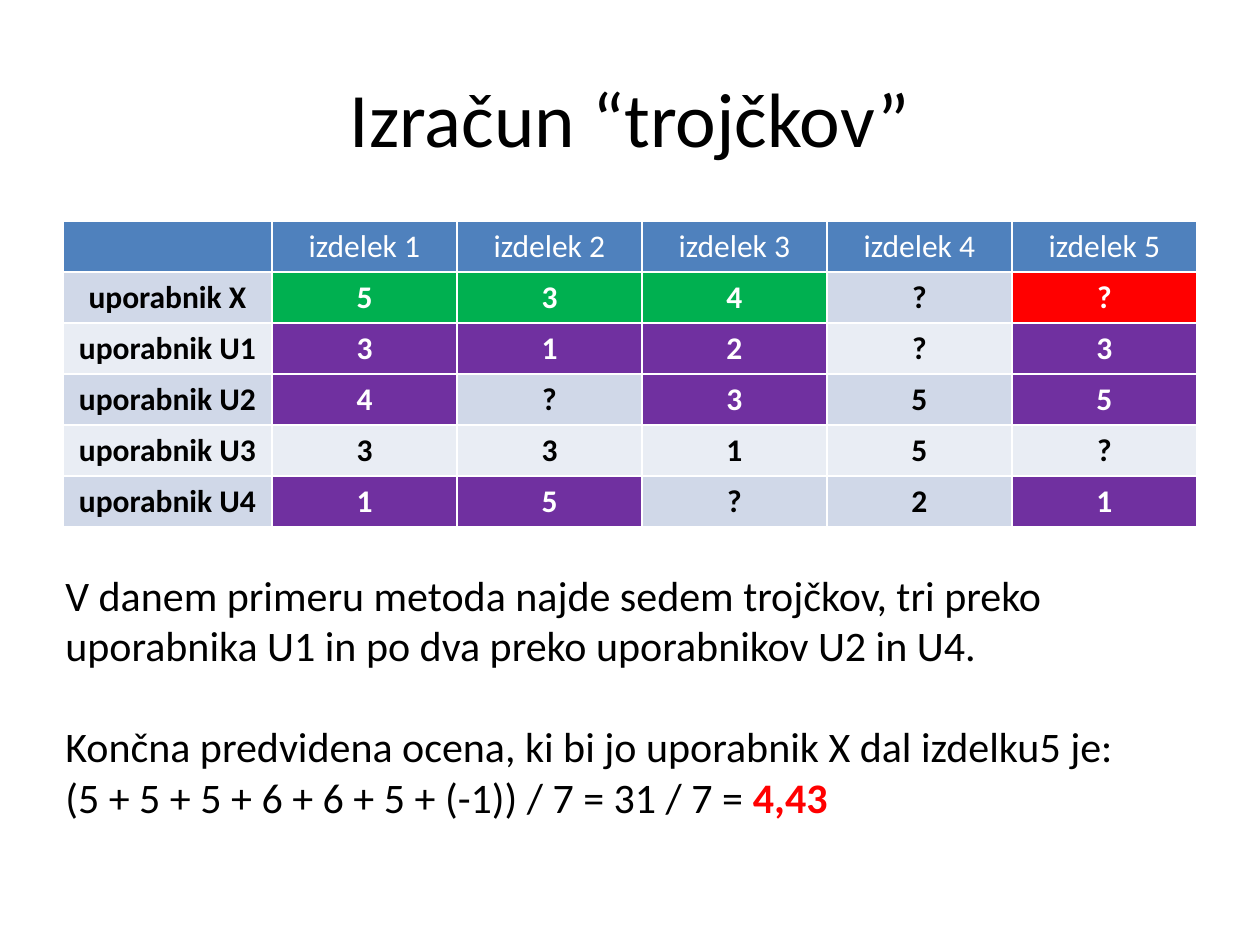
from lxml.etree import SubElement
from pptx import Presentation
from pptx.dml.color import RGBColor as RGB
from pptx.enum.text import MSO_ANCHOR as ANCHOR, PP_ALIGN as ALIGN
from pptx.oxml.ns import qn
from pptx.util import Pt

PX = 914400 / 126
THEME = {
    "font": "Calibri",
    "title": 44, "body": 24, "cell": 18, "gap": 29, "border": 1,
    "black": "000000", "white": "FFFFFF",
    "header": "4F81BD", "bands": ["D0D8E8", "E9EDF4"],
    "marks": {"g": "00B050", "r": "FF0000", "p": "7030A0"},
    "accent": "FF0000",
}


def add_run(p, text, size, color="black", bold=False):
    r = p.add_run()
    r.text = text
    fmt = {"name": THEME["font"], "size": Pt(THEME[size]), "bold": bold}
    for key, value in fmt.items():
        setattr(r.font, key, value)
    r.font.color.rgb = RGB.from_string(THEME[color])


def add_box(*box):
    tf = s.shapes.add_textbox(*[round(v * PX) for v in box]).text_frame
    tf.word_wrap = True
    return tf


prs = Presentation()
prs.slide_width, prs.slide_height = round(1260 * PX), round(945 * PX)
s = prs.slides.add_slide(prs.slide_layouts[6])

tf = add_box(63, 38, 1134, 157)
tf.vertical_anchor = ANCHOR.MIDDLE
p = tf.paragraphs[0]
p.alignment = ALIGN.CENTER
add_run(p, "Izračun “trojčkov”", "title")

rows = [
    ["", "izdelek 1", "izdelek 2", "izdelek 3", "izdelek 4", "izdelek 5"],
    ["uporabnik X", "5", "3", "4", "?", "?"],
    ["uporabnik U1", "3", "1", "2", "?", "3"],
    ["uporabnik U2", "4", "?", "3", "5", "5"],
    ["uporabnik U3", "3", "3", "1", "5", "?"],
    ["uporabnik U4", "1", "5", "?", "2", "1"],
]
marks = ["......", ".ggg.r", ".ppp.p", ".p.p.p", "......", ".pp..p"]
widths = [209] + [185] * 5
row_h = 51

box = [63, 221, sum(widths), row_h * len(rows)]
table = s.shapes.add_table(len(rows), len(widths), *[round(v * PX) for v in box]).table
for col, width in zip(table.columns, widths):
    col.width = round(width * PX)

for i, row in enumerate(rows):
    table.rows[i].height = round(row_h * PX)
    for j, text in enumerate(row):
        cell = table.cell(i, j)
        band = THEME["header"] if i == 0 else THEME["bands"][(i - 1) % 2]
        fill = THEME["marks"].get(marks[i][j], band)
        p = cell.text_frame.paragraphs[0]
        p.alignment = ALIGN.CENTER
        if text:
            color = "black" if fill in THEME["bands"] else "white"
            add_run(p, text, "cell", color, bold=i > 0)
        else:
            p.font.size = Pt(THEME["cell"])
        tcPr = cell._tc.get_or_add_tcPr()
        for side in ("a:lnL", "a:lnR", "a:lnT", "a:lnB"):
            ln = SubElement(tcPr, qn(side), w=str(Pt(THEME["border"])))
            solid = SubElement(ln, qn("a:solidFill"))
            SubElement(solid, qn("a:srgbClr"), val=THEME["white"])
        cell.fill.solid()
        cell.fill.fore_color.rgb = RGB.from_string(fill)

tf = add_box(53, 563, 1134, 267)
add_run(tf.paragraphs[0], "V danem primeru metoda najde sedem trojčkov, tri preko "
        "uporabnika U1 in po dva preko uporabnikov U2 in U4.", "body")
p = tf.add_paragraph()
p.space_before = Pt(THEME["gap"])
add_run(p, "Končna predvidena ocena, ki bi jo uporabnik X dal izdelku5 je:", "body")
p.add_line_break()
add_run(p, "(5 + 5 + 5 + 6 + 6 + 5 + (-1)) / 7 = 31 / 7 = ", "body")
add_run(p, "4,43", "body", "accent", bold=True)

prs.save("out.pptx")
